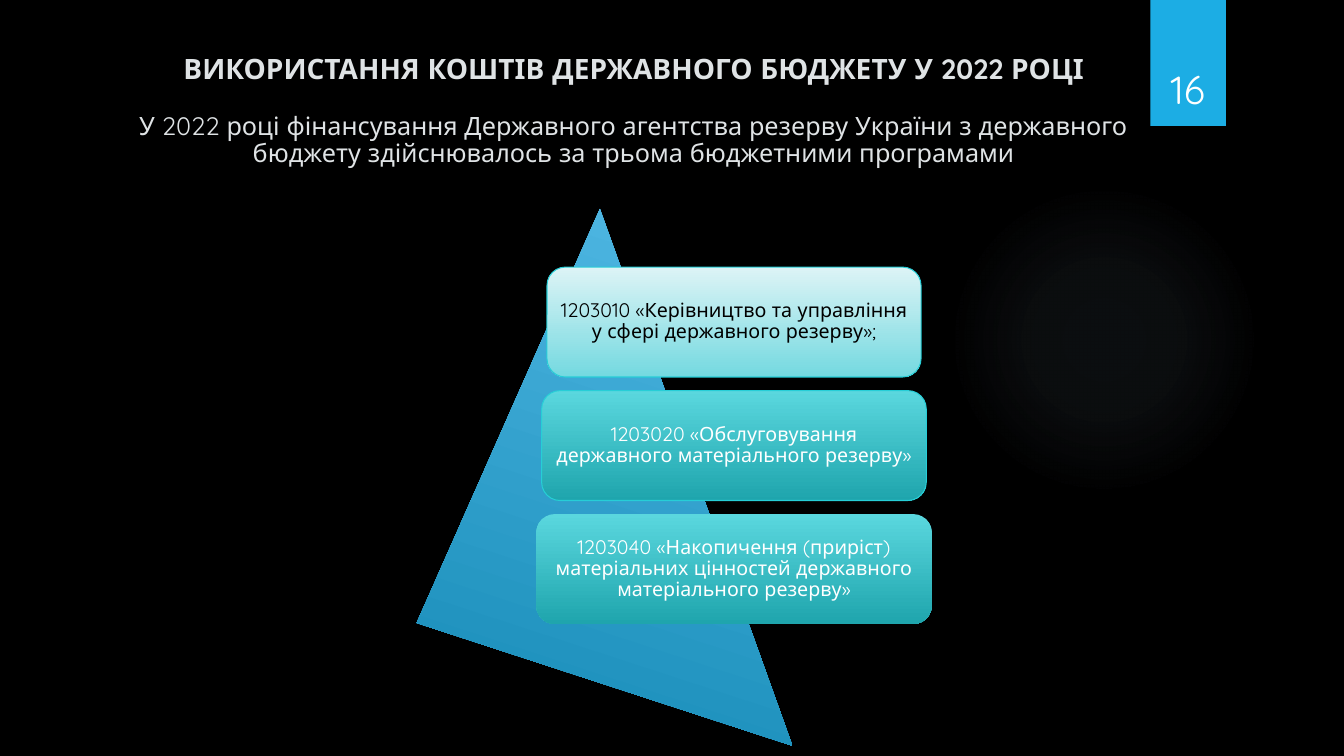
from lxml import etree
from pptx import Presentation
from pptx.dml.color import RGBColor
from pptx.enum.shapes import MSO_SHAPE
from pptx.enum.text import MSO_ANCHOR, PP_ALIGN
from pptx.util import Inches, Pt

# Content
TITLE = [
    ("ВИКОРИСТАННЯ КОШТІВ ДЕРЖАВНОГО БЮДЖЕТУ У 2022 РОЦІ", 20, True),
    ("У 2022 році фінансування Державного агентства резерву України "
     "з державного бюджету здійснювалось за трьома бюджетними програмами", 18, False),
]
CARDS = [
    "1203010 «Керівництво та управління у сфері державного резерву»;",
    "1203020 «Обслуговування державного матеріального резерву»",
    "1203040 «Накопичення (приріст) матеріальних цінностей державного "
    "матеріального резерву»",
]
PAGE = "16"

# Style
FONT = "Quicksand"
BLACK = RGBColor(0, 0, 0)
WHITE = RGBColor(255, 255, 255)
PALE = RGBColor(0xDF, 0xE3, 0xE5)
BLUE = RGBColor(0x1C, 0xAD, 0xE4)
EDGE = RGBColor(0x27, 0xCE, 0xD7)
SKY = (RGBColor(0x57, 0xBD, 0xE9), RGBColor(0x16, 0x8B, 0xB7))
LIGHT = (RGBColor(0xDD, 0xF4, 0xF6), RGBColor(0x74, 0xD9, 0xE0))
TEAL = (RGBColor(0x5A, 0xD7, 0xDE), RGBColor(0x1F, 0xA5, 0xAD))
NS = 'xmlns:a="http://schemas.openxmlformats.org/drawingml/2006/main"'
GLOW = [(0, 7), (36, 6), (69, 0)]  # place and opacity, percent

# Card grid, inches
MID, TOP, WIDE, HIGH = 7.28, 2.65, 3.71, 1.09
STEP, GROW = 1.225, 0.105

deck = Presentation()
deck.slide_width, deck.slide_height = Inches(13.33), Inches(7.5)
slide = deck.slides.add_slide(deck.slide_layouts[5])
slide.background.fill.solid()
slide.background.fill.fore_color.rgb = BLACK


def add(kind, *box):
    shape = slide.shapes.add_shape(kind, *map(Inches, box))
    shape.shadow.inherit = False
    shape.line.fill.background()
    return shape


def shade(shape, pair):
    shape.fill.gradient()
    shape.fill.gradient_angle = 270
    for stop, color in zip(shape.fill.gradient_stops, pair):
        stop.color.rgb = color


def write(para, text, size, color, bold=False):
    para.alignment = PP_ALIGN.CENTER
    run = para.add_run()
    run.text = text
    font = run.font
    font.name, font.size, font.bold = FONT, Pt(size), bold
    font.color.rgb = color


# Soft glow
glow = add(MSO_SHAPE.OVAL, 9.41, 1.83, 3.08, 3.08)
glow.fill.background()
stops = "".join(
    f'<a:gs pos="{pos * 1000}"><a:srgbClr val="A0C1D5">'
    f'<a:alpha val="{alpha * 1000}"/></a:srgbClr></a:gs>' for pos, alpha in GLOW)
props = glow.element.spPr
props.replace(props.find("{*}noFill"), etree.fromstring(
    f'<a:gradFill {NS}><a:gsLst>{stops}</a:gsLst><a:path path="circle">'
    '<a:fillToRect l="50000" t="50000" r="50000" b="50000"/></a:path></a:gradFill>'))

# Page tab with its shadow
tab = add(MSO_SHAPE.RECTANGLE, 11.41, 0, 0.75, 1.25)
tab.fill.solid()
tab.fill.fore_color.rgb = BLUE
tab.element.spPr.find("{*}effectLst").append(etree.fromstring(
    f'<a:outerShdw {NS} blurRad="38100" dist="25400" dir="5400000" rotWithShape="0">'
    '<a:srgbClr val="000000"><a:alpha val="45000"/></a:srgbClr></a:outerShdw>'))

# Title
title = slide.shapes.title
title.left, title.top = Inches(1.15), Inches(0.5)
title.width, title.height = Inches(10.27), Inches(1.58)
frame = title.text_frame
frame.word_wrap = True
frame.vertical_anchor = MSO_ANCHOR.TOP
for i, (text, size, bold) in enumerate(TITLE):
    para = frame.add_paragraph() if i else frame.paragraphs[0]
    para.line_spacing = 0.9
    para.space_before = Pt(20 * i)
    write(para, text, size, PALE, bold)

# Leaning triangle
peak = add(MSO_SHAPE.ISOSCELES_TRIANGLE, 4.73, 2.43, 3.92, 4.47)
peak.adjustments[0] = 0.115
peak.rotation = 18.1
shade(peak, SKY)

# Programme cards, each wider than the one above
for i, text in enumerate(CARDS):
    wide = WIDE + GROW * i
    card = add(MSO_SHAPE.ROUNDED_RECTANGLE, MID - wide / 2, TOP + STEP * i, wide, HIGH)
    shade(card, TEAL if i else LIGHT)
    if i < len(CARDS) - 1:
        card.line.color.rgb = EDGE
        card.line.width = Pt(0.75)
    frame = card.text_frame
    frame.word_wrap = True
    frame.vertical_anchor = MSO_ANCHOR.MIDDLE
    frame.margin_left = frame.margin_right = Inches(0.06)
    frame.margin_top = frame.margin_bottom = Inches(0.06)
    frame.paragraphs[0].line_spacing = 0.9
    write(frame.paragraphs[0], text, 14, WHITE if i else BLACK)

# Page number
num = slide.shapes.add_textbox(*map(Inches, (11.32, 0.32, 0.92, 0.84)))
num.text_frame.word_wrap = True
num.text_frame.vertical_anchor = MSO_ANCHOR.BOTTOM
write(num.text_frame.paragraphs[0], PAGE, 28, WHITE)

deck.save("out.pptx")
